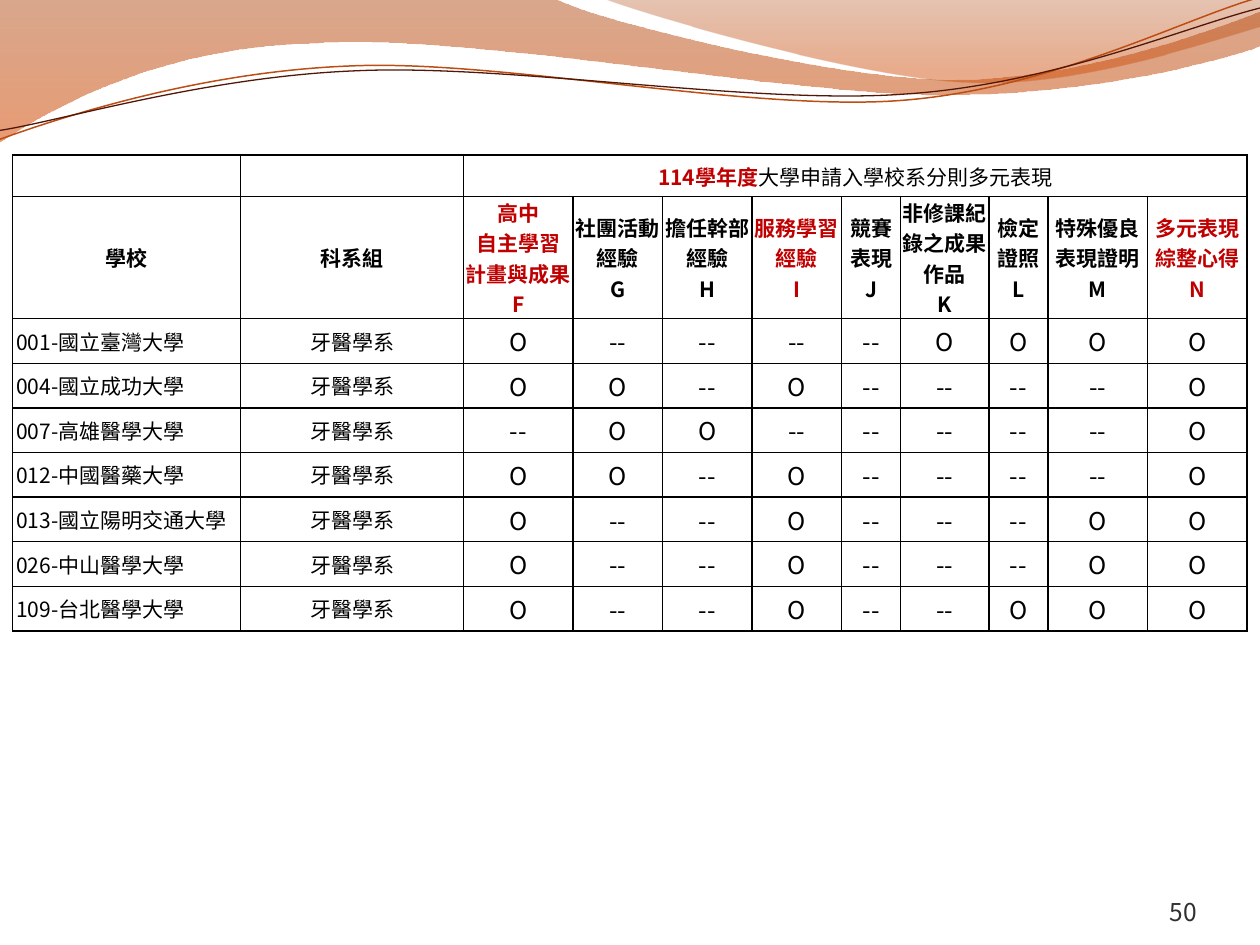
"""Build a slide with a table of university admission portfolio items under a wave banner."""
from copy import deepcopy
from dataclasses import dataclass

from lxml import etree
from pptx import Presentation
from pptx.dml.color import RGBColor
from pptx.enum.text import MSO_ANCHOR, PP_ALIGN
from pptx.oxml.ns import qn
from pptx.util import Pt

LEFT, CENTER, RIGHT = PP_ALIGN.LEFT, PP_ALIGN.CENTER, PP_ALIGN.RIGHT
MIDDLE, BOTTOM = MSO_ANCHOR.MIDDLE, MSO_ANCHOR.BOTTOM
EMU_PER_PX = 9144


@dataclass(frozen=True)
class Theme:
    font: str = "Noto Sans CJK SC"
    black: str = "000000"
    red: str = "C00000"
    white: str = "FFFFFF"
    gray: str = "303030"
    orange: str = "BC4E13"
    brown: str = "521707"
    body: int = 12
    mark: int = 14
    border: int = 1


THEME = Theme()

TITLE = [("114學年度", True), ("大學申請入學校系分則多元表現", False)]
LABELS = ["學校", "科系組"]
ITEMS = [
    ("F", ["高中", "自主學習", "計畫與成果\vF"], THEME.red),
    ("G", ["社團活動經驗\vG"], THEME.black),
    ("H", ["擔任幹部經驗\vH"], THEME.black),
    ("I", ["服務學習", "經驗\vI"], THEME.red),
    ("J", ["競賽", "表現\vJ"], THEME.black),
    ("K", ["非修課紀錄之成果作品\vK"], THEME.black),
    ("L", ["檢定", "證照\vL"], THEME.black),
    ("M", ["特殊優良", "表現證明\vM"], THEME.black),
    ("N", ["多元表現", "綜整心得\vN"], THEME.red),
]
DEPARTMENT = "牙醫學系"
SCHOOLS = [
    ("001-國立臺灣大學", "FKLMN"),
    ("004-國立成功大學", "FGIN"),
    ("007-高雄醫學大學", "GHN"),
    ("012-中國醫藥大學", "FGIN"),
    ("013-國立陽明交通大學", "FIMN"),
    ("026-中山醫學大學", "FIMN"),
    ("109-台北醫學大學", "FILMN"),
]
PAGE_NUMBER = "50"

TABLE_LEFT, TABLE_TOP = 10, 123
COLUMN_WIDTHS = [181, 177, 87, 71, 71, 71, 47, 70, 47, 79, 79]
HEADER_HEIGHTS = [33, 97]
BODY_HEIGHT = 248

WAVES = [
    ([(0, 0), (440, -1), (476, 17, 664, 63, 758, 63), (853, 63, 958, 26, 1000, 9),
      (1001, 36), (983, 44, 870, 76, 746, 75), (622, 75, 382, 28, 257, 34),
      (129, 36, 46, 83, -1, 113), (0, 0)],
     [(0, "AC3D02", 45), (1, "D54A00", 55)]),
    ([(479, -1), (509, 11, 682, 62, 769, 65), (856, 69, 961, 32, 1000, 21), (1000, 0),
      (479, -1)],
     [(0, "AE3C00", 30), (0.8, "CF4800", 45)]),
]
CURVES = [
    ([(-2, 87), (47, 72, 158, 41, 278, 42), (396, 42, 591, 93, 712, 90),
      (832, 87, 940, 36, 1000, 22)], THEME.orange, 0.85),
    ([(-2, 80), (46, 75, 164, 45, 283, 46), (403, 46, 596, 88, 716, 85),
      (835, 83, 942, 42, 1002, 30)], THEME.brown, 0.75),
]
CURVE_ROTATION = 357.3


def px(length):
    return round(length * EMU_PER_PX)


def add_text(paragraph, text, *, size=THEME.body, color=THEME.black, bold=False, align=CENTER):
    paragraph.alignment = align
    for index, line in enumerate(text.split("\v")):
        if index:
            paragraph.add_line_break()
        run = paragraph.add_run()
        run.text = line
        font = run.font
        font.name, font.size, font.bold = THEME.font, Pt(size), bold
        font.color.rgb = RGBColor.from_string(color)
        properties = run._r.get_or_add_rPr()
        etree.SubElement(properties, qn("a:ea"), typeface=THEME.font)
    for line_break in paragraph._p.findall(qn("a:br")):
        line_break.insert(0, deepcopy(properties))


def add_path(slide, path, closed):
    points = [(px(x), px(y)) for segment in path for x, y in zip(segment[::2], segment[1::2])]
    builder = slide.shapes.build_freeform(*points[0], scale=1.0)
    builder.add_line_segments(points[1:], close=closed)
    shape = builder.convert_to_shape()
    shape.shadow.inherit = False
    lines = iter(list(shape.element.iter(qn("a:lnTo"))))
    for segment in path[1:]:
        first = next(lines)
        if len(segment) == 6:
            first.tag = qn("a:cubicBezTo")
            for line in (next(lines), next(lines)):
                first.append(line[0])
                line.getparent().remove(line)
    return shape


def add_banner(slide):
    for path, stops in WAVES:
        shape = add_path(slide, path, True)
        shape.line.fill.background()
        shape.fill.gradient()
        shape.fill.gradient_angle = 270
        for stop, (position, color, opacity) in zip(shape.fill.gradient_stops, stops):
            stop.position = position
            stop.color.rgb = RGBColor.from_string(color)
        for element, (_, _, opacity) in zip(shape.element.iter(qn("a:srgbClr")), stops):
            etree.SubElement(element, qn("a:alpha"), val=str(opacity * 1000))
    for path, color, width in CURVES:
        shape = add_path(slide, path, False)
        shape.rotation = CURVE_ROTATION
        shape.fill.background()
        shape.line.color.rgb = RGBColor.from_string(color)
        shape.line.width = Pt(width)


def style_cell(cell):
    properties = cell._tc.get_or_add_tcPr()
    for side in ("lnL", "lnR", "lnT", "lnB"):
        line = etree.SubElement(properties, qn(f"a:{side}"), w=str(Pt(THEME.border)))
        fill = etree.SubElement(line, qn("a:solidFill"))
        etree.SubElement(fill, qn("a:srgbClr"), val=THEME.black)
    cell.fill.solid()
    cell.fill.fore_color.rgb = RGBColor.from_string(THEME.white)
    cell.vertical_anchor = MIDDLE


def fill_cell(cell, paragraphs, margins=(0, 0), **text_format):
    cell.margin_left = cell.margin_right = px(margins[0])
    cell.margin_top = cell.margin_bottom = px(margins[1])
    frame = cell.text_frame
    for index, text in enumerate(paragraphs):
        paragraph = frame.add_paragraph() if index else frame.paragraphs[0]
        add_text(paragraph, text, **text_format)


def add_portfolio_table(slide):
    heights = HEADER_HEIGHTS + [BODY_HEIGHT / len(SCHOOLS)] * len(SCHOOLS)
    frame = slide.shapes.add_table(len(heights), len(COLUMN_WIDTHS), px(TABLE_LEFT), px(TABLE_TOP),
                                   px(sum(COLUMN_WIDTHS)), px(sum(heights)))
    table = frame.table
    table.first_row = table.horz_banding = False
    for column, width in zip(table.columns, COLUMN_WIDTHS):
        column.width = px(width)
    for row, height in zip(table.rows, heights):
        row.height = px(height)
        for cell in row.cells:
            style_cell(cell)

    first_item = len(LABELS)
    title = table.cell(0, first_item)
    title.merge(table.cell(0, len(COLUMN_WIDTHS) - 1))
    fill_cell(title, [], (9, 5))
    for text, strong in TITLE:
        add_text(title.text_frame.paragraphs[0], text, bold=strong,
                 color=THEME.red if strong else THEME.black)
    for column, label in enumerate(LABELS):
        fill_cell(table.cell(0, column), [])
        fill_cell(table.cell(1, column), [label], (3, 3), bold=True)
    for column, (_, lines, color) in enumerate(ITEMS, first_item):
        fill_cell(table.cell(1, column), lines, bold=True, color=color)
    for row, (school, required) in enumerate(SCHOOLS, len(HEADER_HEIGHTS)):
        fill_cell(table.cell(row, 0), [school], (3, 3), align=LEFT)
        fill_cell(table.cell(row, 1), [DEPARTMENT], (3, 3))
        for column, (letter, _, _) in enumerate(ITEMS, first_item):
            mark = "O" if letter in required else "--"
            fill_cell(table.cell(row, column), [mark], size=THEME.mark)


def add_page_number(slide):
    frame = slide.shapes.add_textbox(px(867), px(695), px(83), px(40)).text_frame
    frame.word_wrap = True
    frame.vertical_anchor = BOTTOM
    frame.margin_left = frame.margin_right = frame.margin_top = frame.margin_bottom = 0
    add_text(frame.paragraphs[0], PAGE_NUMBER, size=THEME.mark, color=THEME.gray, align=RIGHT)


def main():
    presentation = Presentation()
    presentation.slide_width, presentation.slide_height = px(1000), px(750)
    slide = presentation.slides.add_slide(presentation.slide_layouts[6])
    add_banner(slide)
    add_page_number(slide)
    add_portfolio_table(slide)
    presentation.save("out.pptx")


if __name__ == "__main__":
    main()
